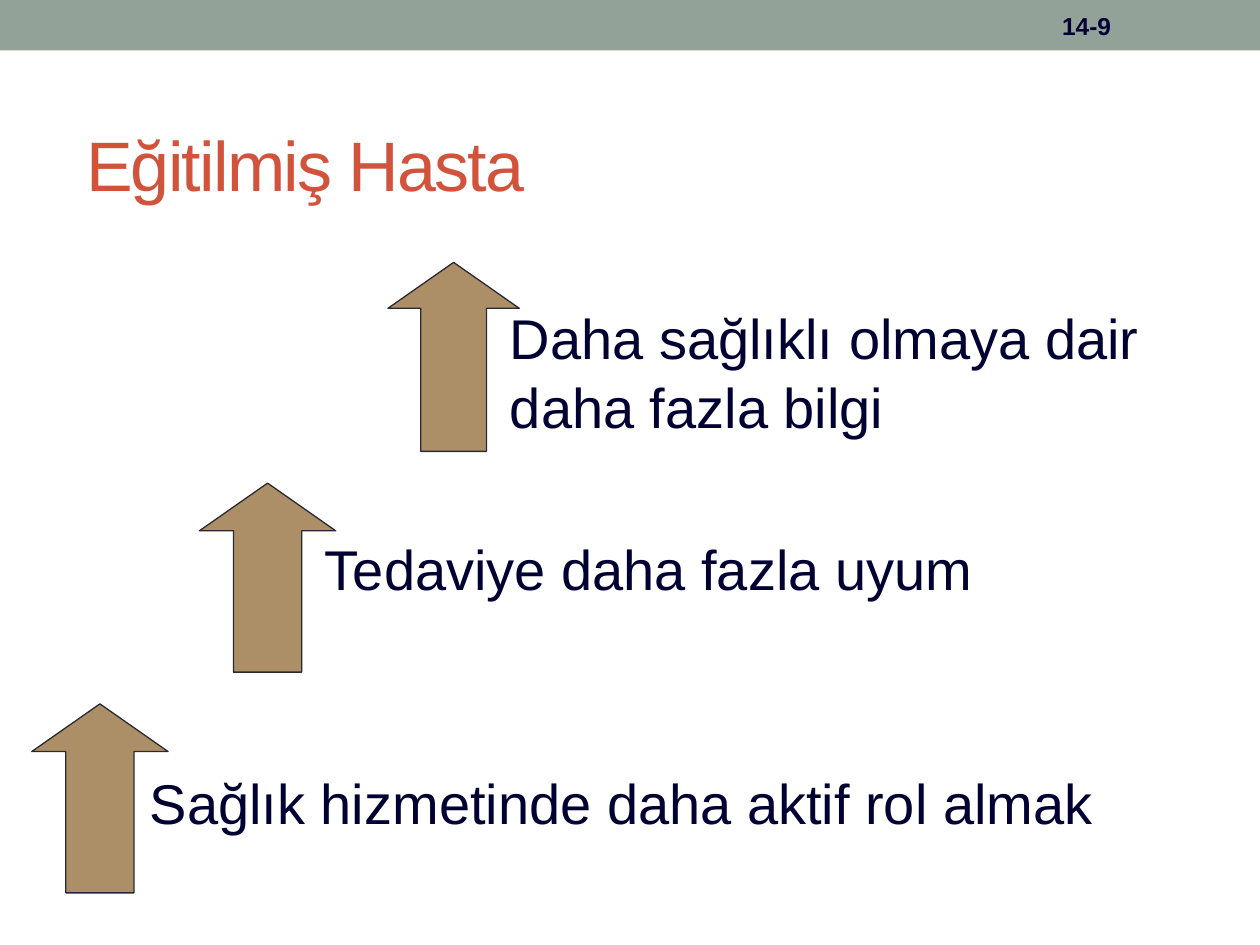
from pptx import Presentation
from pptx.dml.color import RGBColor
from pptx.enum.shapes import MSO_SHAPE
from pptx.enum.text import MSO_ANCHOR, PP_ALIGN
from pptx.util import Cm, Pt

SAGE = RGBColor(0x93, 0xA2, 0x99)
RUST = RGBColor(0xD2, 0x53, 0x3C)
TAN = RGBColor(0xAD, 0x8F, 0x67)
CHARCOAL = RGBColor(0x29, 0x29, 0x34)
NAVY = RGBColor(0x00, 0x00, 0x33)
FONT = "Arial"

PAGE_WIDTH, PAGE_HEIGHT = Cm(25.4), Cm(19.05)
ARROW_HEIGHT = Cm(3.81)
STEP_PITCH = Cm(4.45)
TOP_STEP = Cm(5.29)

# Top to bottom: text, arrow left and width, text offset from the arrow, text size
STEPS = [
    ("Daha sağlıklı olmaya dair daha fazla bilgi",
     Cm(7.82), Cm(2.65), (Cm(2.21), Cm(0.64)), (Cm(14.3), Cm(3))),
    ("Tedaviye daha fazla uyum",
     Cm(4.02), Cm(2.75), (Cm(2.28), Cm(0.86)), (Cm(17.2), Cm(1.62))),
    ("Sağlık hizmetinde daha aktif rol almak",
     Cm(0.64), Cm(2.75), (Cm(2.13), Cm(1.12)), (Cm(19.94), Cm(1.6))),
]


def write(frame, text, size, color, bold=False, anchor=MSO_ANCHOR.TOP):
    frame.word_wrap = True
    frame.vertical_anchor = anchor
    para = frame.paragraphs[0]
    para.alignment = PP_ALIGN.LEFT
    span = para.add_run()
    span.text = text
    span.font.name = FONT
    span.font.size = Pt(size)
    span.font.bold = bold
    span.font.color.rgb = color
    return para, span


def add_header(page, left, top, width, height):
    band = page.shapes.add_shape(MSO_SHAPE.RECTANGLE, left, top, width, height)
    band.shadow.inherit = False
    band.fill.solid()
    band.fill.fore_color.rgb = SAGE
    band.line.fill.background()
    number = page.shapes.add_textbox(left + Cm(21.16), top + Cm(0.05),
                                     Cm(2.97), height - Cm(0.1))
    write(number.text_frame, "14-9", 14, NAVY, True, MSO_ANCHOR.MIDDLE)


def place_title(page, left, top, width, height):
    title = page.shapes.title
    title.left, title.top, title.width, title.height = left, top, width, height
    para, span = write(title.text_frame, "Eğitilmiş Hasta", 40, RUST,
                       anchor=MSO_ANCHOR.MIDDLE)
    span.font._element.set("spc", "-100")


def add_step(page, left, top, width, height, text, offset, text_size):
    """Group an upward arrow with the text at its right."""
    group = page.shapes.add_group_shape()
    arrow = group.shapes.add_shape(MSO_SHAPE.UP_ARROW, left, top, width, height)
    arrow.adjustments[0] = 0.5
    arrow.adjustments[1] = 0.35
    arrow.shadow.inherit = False
    arrow.fill.solid()
    arrow.fill.fore_color.rgb = TAN
    arrow.line.color.rgb = CHARCOAL
    arrow.line.width = Pt(0.75)
    label = group.shapes.add_textbox(left + offset[0], top + offset[1], *text_size)
    para, span = write(label.text_frame, text, 32, NAVY)
    para.line_spacing = 1.04


def main():
    deck = Presentation()
    deck.slide_width, deck.slide_height = PAGE_WIDTH, PAGE_HEIGHT
    page = deck.slides.add_slide(deck.slide_layouts[5])
    add_header(page, 0, 0, PAGE_WIDTH, Cm(1.02))
    place_title(page, Cm(1.48), Cm(1.7), Cm(23.92), Cm(3.18))
    for row, (text, left, width, offset, text_size) in enumerate(STEPS):
        add_step(page, left, TOP_STEP + row * STEP_PITCH, width, ARROW_HEIGHT,
                 text, offset, text_size)
    deck.save("out.pptx")


if __name__ == "__main__":
    main()
